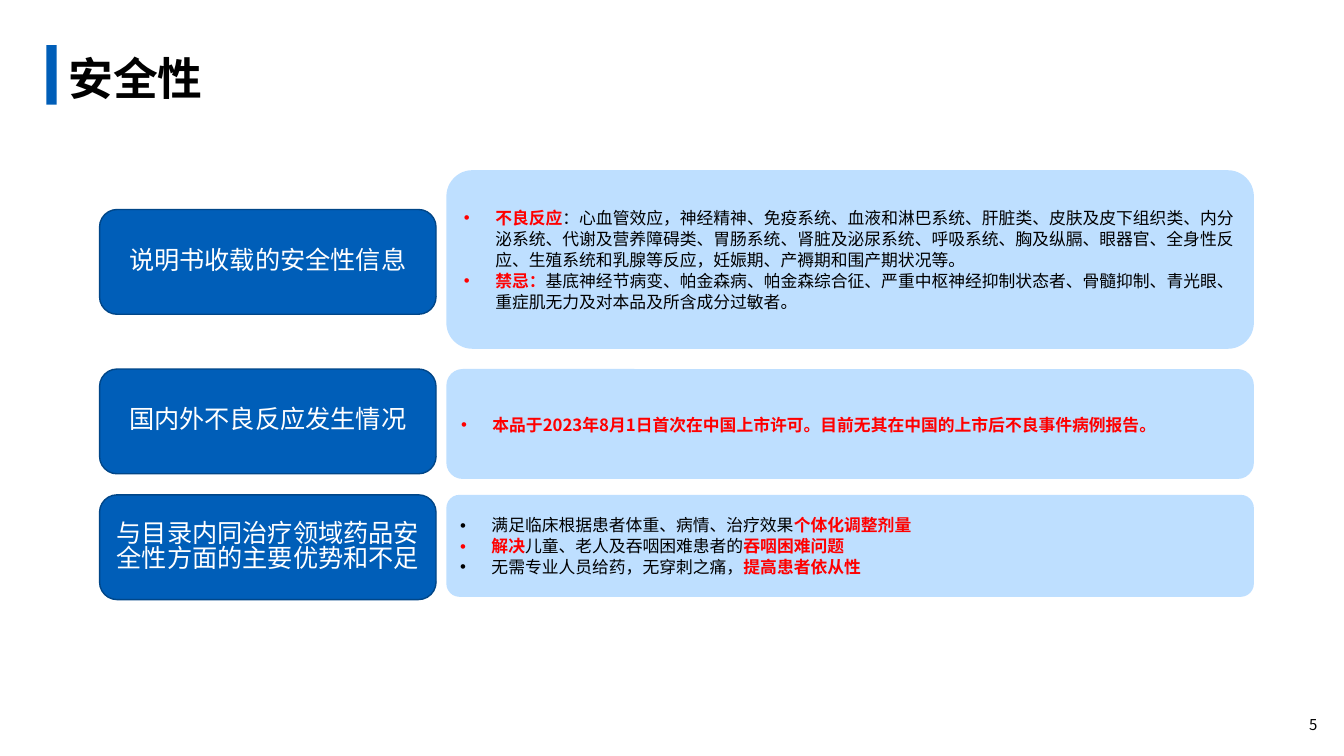
import lxml.etree
import pptx
import pptx.dml.color
import pptx.enum.lang
import pptx.enum.shapes
import pptx.enum.text
import pptx.oxml.ns
import pptx.util

Cm = pptx.util.Cm
RGBColor = pptx.dml.color.RGBColor
ALIGN = pptx.enum.text.PP_ALIGN
SHAPES = pptx.enum.shapes.MSO_SHAPE

BLUE = RGBColor(0x00, 0x5E, 0xB8)
DARK_BLUE = RGBColor(0x00, 0x46, 0x88)
PALE_BLUE = RGBColor(0xBE, 0xDF, 0xFF)
RED = RGBColor(0xFF, 0x00, 0x00)
BLACK = RGBColor(0x00, 0x00, 0x00)
WHITE = RGBColor(0xFF, 0xFF, 0xFF)

FONT = "Noto Sans CJK SC"
NUMBER_FONT = "Noto Sans CJK JP"
LABEL_LEFT, LABEL_WIDTH, LABEL_HEIGHT = 2.51, 8.48, 2.64
PANEL_LEFT, PANEL_WIDTH = 11.25, 20.35

# Each panel paragraph is a list of (text, is highlighted)
ROWS = [
    dict(label="说明书收载的安全性信息", label_top=5.28,
         panel_top=4.29, panel_height=4.5, rounding=0.146, paragraphs=[
             [("不良反应", True),
              ("：心血管效应，神经精神、免疫系统、血液和淋巴系统、肝脏类、皮肤及皮下组织类、"
               "内分泌系统、代谢及营养障碍类、胃肠系统、肾脏及泌尿系统、呼吸系统、胸及纵膈、"
               "眼器官、全身性反应、生殖系统和乳腺等反应，妊娠期、产褥期和围产期状况等。", False)],
             [("禁忌：", True),
              ("基底神经节病变、帕金森病、帕金森综合征、严重中枢神经抑制状态者、骨髓抑制、"
               "青光眼、重症肌无力及对本品及所含成分过敏者。", False)]]),
    dict(label="国内外不良反应发生情况", label_top=9.3,
         panel_top=9.3, panel_height=2.77, rounding=0.148, paragraphs=[
             [("本品于2023年8月1日首次在中国上市许可。"
               "目前无其在中国的上市后不良事件病例报告。", True)]]),
    dict(label="与目录内同治疗领域药品安全性方面的主要优势和不足", label_top=12.47,
         panel_top=12.47, panel_height=2.57, rounding=0.129, paragraphs=[
             [("满足临床根据患者体重、病情、治疗效果", False), ("个体化调整剂量", True)],
             [("解决", True), ("儿童、老人及吞咽困难患者的", False), ("吞咽困难问题", True)],
             [("无需专业人员给药，无穿刺之痛，", False), ("提高患者依从性", True)]]),
]


def add_text(paragraph, text, size, color=BLACK, bold=False, name=FONT):
    run = paragraph.add_run()
    run.text = text
    font = run.font
    font.size = pptx.util.Pt(size)
    font.bold = bold
    font.name = name
    font.color.rgb = color
    font.language_id = pptx.enum.lang.MSO_LANGUAGE_ID.SIMPLIFIED_CHINESE
    east_asian = lxml.etree.SubElement(run._r.get_or_add_rPr(), pptx.oxml.ns.qn("a:ea"))
    east_asian.set("typeface", name)


def add_bullet(paragraph, color):
    properties = paragraph._p.get_or_add_pPr()
    properties.set("marL", str(Cm(0.79)))
    properties.set("indent", str(-Cm(0.79)))
    bullet_color = lxml.etree.SubElement(properties, pptx.oxml.ns.qn("a:buClr"))
    lxml.etree.SubElement(bullet_color, pptx.oxml.ns.qn("a:srgbClr")).set("val", str(color))
    bullet_font = lxml.etree.SubElement(properties, pptx.oxml.ns.qn("a:buFont"))
    bullet_font.set("typeface", "Arial")
    lxml.etree.SubElement(properties, pptx.oxml.ns.qn("a:buChar")).set("char", "•")


def prepare_frame(shape):
    frame = shape.text_frame
    frame.word_wrap = True
    frame.vertical_anchor = pptx.enum.text.MSO_ANCHOR.MIDDLE
    return frame


def add_block(slide, kind, left, top, width, height, fill, line=None):
    shape = slide.shapes.add_shape(kind, Cm(left), Cm(top), Cm(width), Cm(height))
    shape.shadow.inherit = False
    shape.fill.solid()
    shape.fill.fore_color.rgb = fill
    if line is None:
        shape.line.fill.background()
    else:
        shape.line.color.rgb = line
        shape.line.width = pptx.util.Pt(1)
    return shape


def add_heading(slide, left, top, height):
    # Accent bar and title
    add_block(slide, SHAPES.RECTANGLE, left, top, 0.26, height, BLUE)
    box = slide.shapes.add_textbox(Cm(left + 0.3), Cm(top), Cm(27.43), Cm(height + 0.15))
    add_text(prepare_frame(box).paragraphs[0], "安全性", 32, bold=True)


def add_label(slide, text, left, top, width, height):
    shape = add_block(slide, SHAPES.ROUNDED_RECTANGLE, left, top, width, height, BLUE, DARK_BLUE)
    paragraph = prepare_frame(shape).paragraphs[0]
    paragraph.alignment = ALIGN.CENTER
    paragraph.line_spacing = 0.82
    add_text(paragraph, text, 18, WHITE)


def add_panel(slide, paragraphs, rounding, left, top, width, height):
    shape = add_block(slide, SHAPES.ROUNDED_RECTANGLE, left, top, width, height, PALE_BLUE)
    shape.adjustments[0] = rounding
    frame = prepare_frame(shape)
    for index, parts in enumerate(paragraphs):
        paragraph = frame.add_paragraph() if index else frame.paragraphs[0]
        add_bullet(paragraph, RED if parts[0][1] else BLACK)
        paragraph.alignment = ALIGN.LEFT
        paragraph.line_spacing = 1.04
        for text, highlighted in parts:
            add_text(paragraph, text, 12, RED if highlighted else BLACK, highlighted)


def add_page_number(slide, left, top, width, height):
    box = slide.shapes.add_textbox(Cm(left), Cm(top), Cm(width), Cm(height))
    frame = prepare_frame(box)
    frame.margin_left = frame.margin_right = Cm(0.33)
    frame.margin_top = frame.margin_bottom = Cm(0.18)
    paragraph = frame.paragraphs[0]
    paragraph.alignment = ALIGN.RIGHT
    add_text(paragraph, "5", 10.7, name=NUMBER_FONT)


def main():
    presentation = pptx.Presentation()
    presentation.slide_width, presentation.slide_height = Cm(33.87), Cm(19.05)
    slide = presentation.slides.add_slide(presentation.slide_layouts[6])
    add_heading(slide, 1.17, 1.14, 1.5)
    # Safety topics: label on the left, details on the right
    for row in ROWS:
        add_label(slide, row["label"], LABEL_LEFT, row["label_top"], LABEL_WIDTH, LABEL_HEIGHT)
        add_panel(slide, row["paragraphs"], row["rounding"],
                  PANEL_LEFT, row["panel_top"], PANEL_WIDTH, row["panel_height"])
    add_page_number(slide, 31.83, 17.75, 1.7, 1.02)
    presentation.save("out.pptx")


if __name__ == "__main__":
    main()
